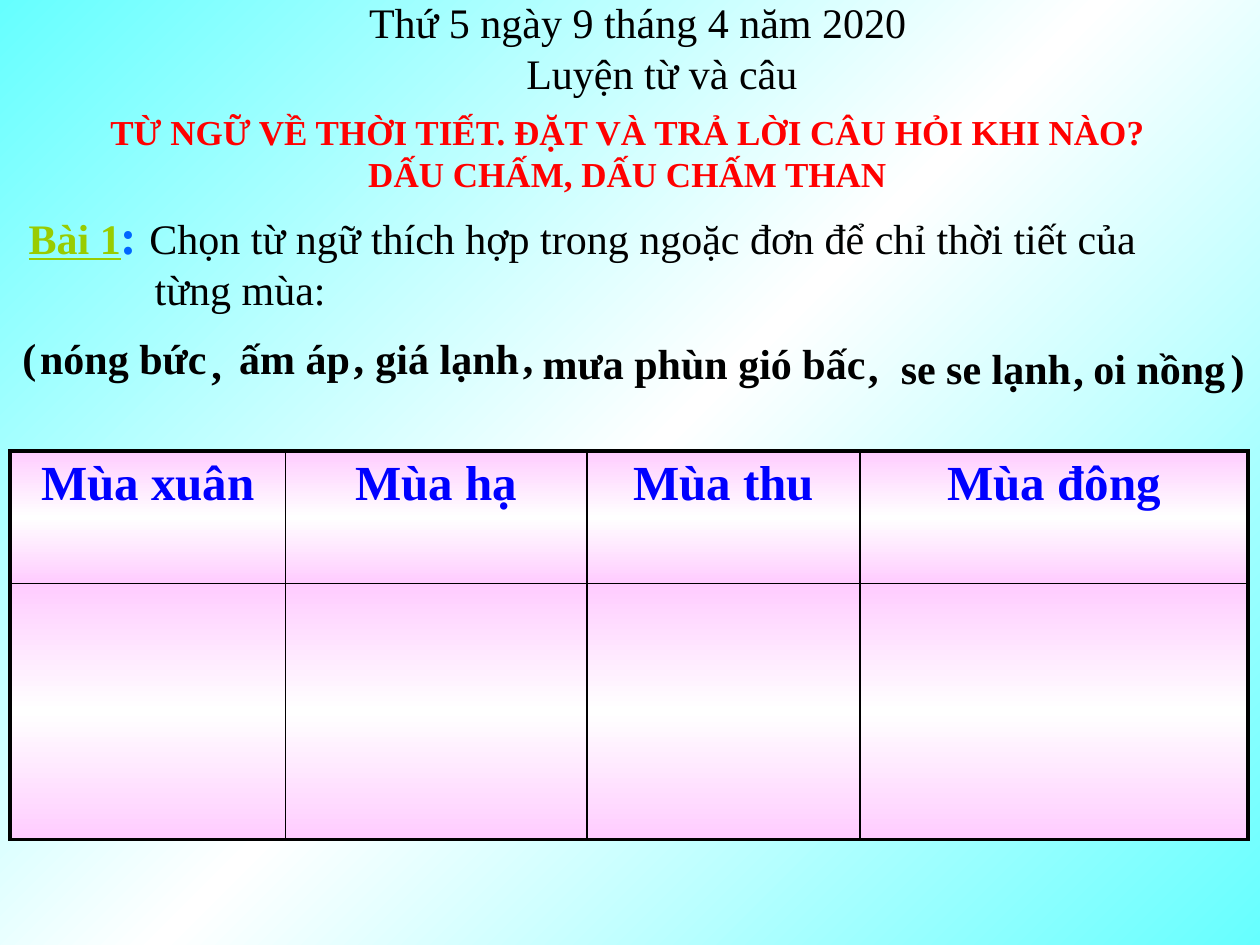
from lxml.etree import SubElement
from pptx import Presentation
from pptx.dml.color import RGBColor
from pptx.enum.text import MSO_AUTO_SIZE, PP_ALIGN
from pptx.oxml.ns import qn
from pptx.util import Cm, Pt

HUES = {
    "ink": "000000", "red": "FF0000", "lime": "99CC00", "sky": "0066FF",
    "blue": "0000FF", "pink": "FFCCFF", "white": "FFFFFF", "aqua": "66FFFF",
}
BASE = {"name": "Times New Roman", "size": Pt(24)}
BOLD = {**BASE, "bold": True}
TITLE = {**BOLD, "size": Pt(20)}
HEAD = {**BOLD, "size": Pt(28)}
LABEL = {**BOLD, "underline": True}

WORDS = [
    ("nóng bức", 0.56, 6.58, 4), ("ấm áp", 4.57, 6.58, 3.4),
    ("giá lạnh", 7.32, 6.58, 5.08), ("mưa phùn gió bấc", 10.69, 6.68, 7.19),
    ("se se lạnh", 17.91, 6.78, 4.01), ("oi nồng", 21.79, 6.78, 3.38),
]
MARKS = [
    ("(", 0.2, 6.55, 0.79), (")", 24.56, 6.78, 0.79),
    (",", 4.01, 6.68, 0.74), (",", 6.88, 6.55, 0.74),
    (",", 10.29, 6.55, 0.74), (",", 17.25, 6.73, 0.74),
    (",", 21.39, 6.81, 0.74),
]
SEASONS = ["Mùa xuân", "Mùa hạ", "Mùa thu", "Mùa đông"]
COLS = [5.56, 6.07, 5.51, 7.82]
ROWS = [2.67, 5.16]


def add_run(para, text, style, hue="ink"):
    run = para.add_run()
    run.text = text
    for key, value in style.items():
        setattr(run.font, key, value)
    run.font.color.rgb = RGBColor.from_string(HUES[hue])


def add_box(slide, left, top, width, height=1.27, wrap=True):
    box = slide.shapes.add_textbox(Cm(left), Cm(top), Cm(width), Cm(height))
    frame = box.text_frame
    frame.word_wrap = wrap
    frame.auto_size = MSO_AUTO_SIZE.SHAPE_TO_FIT_TEXT
    return frame


def add_hue(parent, hue):
    SubElement(parent, qn("a:srgbClr"), val=HUES[hue])


def add_blend(parent, edge, angle):
    grad = SubElement(parent, qn("a:gradFill"), rotWithShape="1")
    stops = SubElement(grad, qn("a:gsLst"))
    for place, hue in ((0, edge), (50, "white"), (100, edge)):
        add_hue(SubElement(stops, qn("a:gs"), pos=str(place * 1000)), hue)
    SubElement(grad, qn("a:lin"), ang=str(angle * 60000), scaled="0")
    return grad


def paint_back(slide):
    slide.background.fill.solid()
    back = slide.element.find(".//" + qn("p:bgPr"))
    back.replace(back[0], add_blend(back, "aqua", 45))


def style_cell(cell, row, col):
    props = cell._tc.get_or_add_tcPr()
    outer = {
        "L": col == 0, "R": col == len(COLS) - 1,
        "T": row == 0, "B": row == len(ROWS) - 1,
    }
    for side, thick in outer.items():
        width = Pt(2.25 if thick else 1)
        line = SubElement(props, qn("a:ln" + side), w=str(width))
        add_hue(SubElement(line, qn("a:solidFill")), "ink")
    add_blend(props, "pink", 90)


def add_grid(slide):
    shape = slide.shapes.add_table(
        len(ROWS), len(COLS), Cm(0.2), Cm(9.09), Cm(sum(COLS)), Cm(sum(ROWS)))
    table = shape.table
    table.first_row = table.horz_banding = False
    for col, width in enumerate(COLS):
        table.columns[col].width = Cm(width)
    for row, height in enumerate(ROWS):
        table.rows[row].height = Cm(height)
        for col in range(len(COLS)):
            style_cell(table.cell(row, col), row, col)
    for col, season in enumerate(SEASONS):
        para = table.cell(0, col).text_frame.paragraphs[0]
        para.alignment = PP_ALIGN.CENTER
        add_run(para, season, HEAD, "blue")


def add_title(slide):
    frame = add_box(slide, 1.17, 2.11, 22.96, 1.96)
    first, second = frame.paragraphs[0], frame.add_paragraph()
    add_run(first, "TỪ NGỮ VỀ THỜI TIẾT. ĐẶT VÀ TRẢ LỜI CÂU HỎI KHI NÀO?", TITLE, "red")
    add_run(second, "DẤU CHẤM, DẤU CHẤM THAN", TITLE, "red")
    first.alignment = second.alignment = PP_ALIGN.CENTER


def add_task(slide):
    frame = add_box(slide, 0.33, 4.01, 22.94, 2.49)
    first, second = frame.paragraphs[0], frame.add_paragraph()
    add_run(first, "Bài 1", LABEL, "lime")
    add_run(first, ": ", HEAD, "sky")
    add_run(first, "Chọn từ ngữ thích hợp trong ngoặc đơn để chỉ thời tiết của", BASE)
    add_run(second, "từng mùa:", BASE)
    second._p.get_or_add_pPr().set("marL", str(Cm(2.54)))


def add_words(slide, items, wrap):
    for text, left, top, width in items:
        frame = add_box(slide, left, top, width, wrap=wrap)
        add_run(frame.paragraphs[0], text, BOLD)


def main():
    deck = Presentation()
    deck.slide_width, deck.slide_height = Cm(25.4), Cm(19.05)
    slide = deck.slides.add_slide(deck.slide_layouts[6])
    paint_back(slide)
    lesson = add_box(slide, 10.36, 0.84, 6.55)
    add_run(lesson.paragraphs[0], "Luyện từ và câu", BASE)
    date = add_box(slide, 7.19, -0.2, 11.43, wrap=False)
    add_run(date.paragraphs[0], "Thứ 5 ngày 9 tháng 4 năm 2020", BASE)
    add_title(slide)
    add_task(slide)
    add_grid(slide)
    add_words(slide, WORDS, True)
    add_words(slide, MARKS, False)
    deck.save("out.pptx")


if __name__ == "__main__":
    main()
